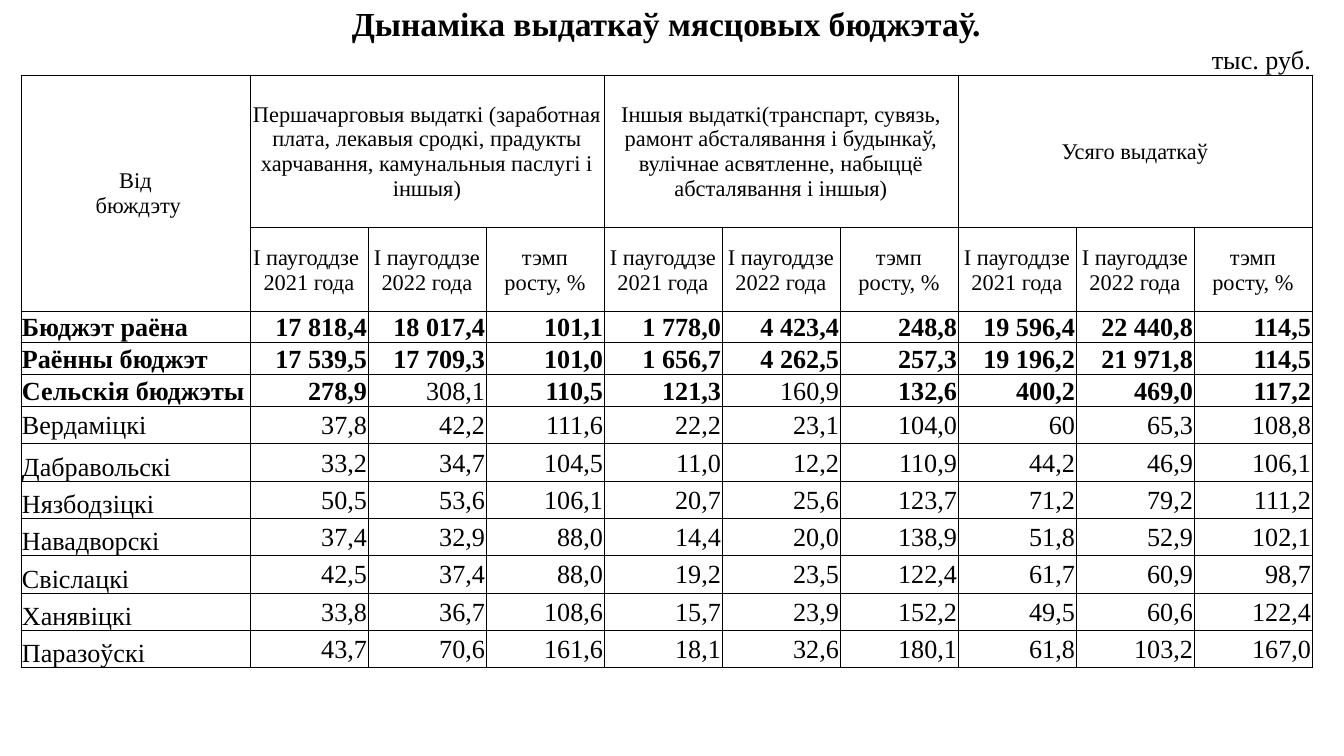
from typing import NamedTuple

from lxml import etree
from pptx import Presentation
from pptx import util as u
from pptx.dml.color import RGBColor
from pptx.enum import text
from pptx.oxml.ns import qn

PX = 914400 / 134.4
FONT = "Times New Roman"
BLACK = "000000"
NO_STYLE = "{2D5ABB26-0587-4C30-8999-92F81FD0307C}"
LEFT, CENTER, RIGHT = text.PP_ALIGN.LEFT, text.PP_ALIGN.CENTER, text.PP_ALIGN.RIGHT
MIDDLE, BOTTOM = text.MSO_ANCHOR.MIDDLE, text.MSO_ANCHOR.BOTTOM
ALL_SIDES = ("L", "R", "T", "B")
COL_WIDTHS = [229] + [118] * 9
ROW_HEIGHTS = [40, 31, 153, 84, 31, 32, 32, 37, 38, 37, 37, 38, 37, 37]


class Style(NamedTuple):
    size: int
    align: text.PP_ALIGN
    anchor: text.MSO_ANCHOR = MIDDLE
    bold: bool = False


class Budget(NamedTuple):
    name: str
    values: tuple[str, ...]
    bold: bool = False
    anchor: text.MSO_ANCHOR = BOTTOM
    regular_columns: tuple[int, ...] = ()


TITLE = Style(18, CENTER, BOTTOM, True)
UNIT = Style(14, RIGHT, BOTTOM)
HEADER = Style(12, CENTER)

GROUPS = [
    "Першачарговыя выдаткі (заработная плата, лекавыя сродкі, прадукты харчавання, камунальныя паслугі і іншыя)",
    "Іншыя выдаткі(транспарт, сувязь, рамонт абсталявання і будынкаў, вулічнае асвятленне, набыццё абсталявання і іншыя)",
    "Усяго выдаткаў",
]
GROWTH = ("тэмп", "росту, %")
PERIODS = [("I паугоддзе ", "2021 года"), ("I паугоддзе", "2022 года"), GROWTH]
PERIODS += [("I паугоддзе 2021 года",), ("I паугоддзе 2022 года",), GROWTH] * 2

BUDGETS = [
    Budget("Бюджэт раёна", ("17 818,4", "18 017,4", "101,1", "1 778,0", "4 423,4", "248,8",
                            "19 596,4", "22 440,8", "114,5"), True, MIDDLE),
    Budget("Раённы бюджэт", ("17 539,5", "17 709,3", "101,0", "1 656,7", "4 262,5", "257,3",
                             "19 196,2", "21 971,8", "114,5"), True, MIDDLE),
    Budget("Сельскія бюджэты", ("278,9", "308,1", "110,5", "121,3", "160,9", "132,6",
                                "400,2", "469,0", "117,2"), True, MIDDLE, (2, 5)),
    Budget("Вердаміцкі", ("37,8", "42,2", "111,6", "22,2", "23,1", "104,0",
                          "60", "65,3", "108,8"), anchor=MIDDLE),
    Budget("Дабравольскі", ("33,2", "34,7", "104,5", "11,0", "12,2", "110,9", "44,2", "46,9", "106,1")),
    Budget("Нязбодзіцкі", ("50,5", "53,6", "106,1", "20,7", "25,6", "123,7", "71,2", "79,2", "111,2")),
    Budget("Навадворскі", ("37,4", "32,9", "88,0", "14,4", "20,0", "138,9", "51,8", "52,9", "102,1")),
    Budget("Свіслацкі", ("42,5", "37,4", "88,0", "19,2", "23,5", "122,4", "61,7", "60,9", "98,7")),
    Budget("Ханявіцкі", ("33,8", "36,7", "108,6", "15,7", "23,9", "152,2", "49,5", "60,6", "122,4")),
    Budget("Паразоўскі", ("43,7", "70,6", "161,6", "18,1", "32,6", "180,1", "61,8", "103,2", "167,0")),
]


def px(n: int) -> u.Emu:
    return u.Emu(round(n * PX))


def rgb(value: str) -> RGBColor:
    return RGBColor.from_string(value)


def format_cell(cell, sides: tuple[str, ...]) -> None:
    cell.margin_left = cell.margin_right = cell.margin_top = px(1)
    cell.margin_bottom = 0
    cell.fill.background()
    tc_pr = cell._tc.get_or_add_tcPr()
    for i, side in enumerate(sides):
        ln = etree.Element(qn(f"a:ln{side}"), w=str(u.Pt(0.5)))
        fill = etree.SubElement(ln, qn("a:solidFill"))
        etree.SubElement(fill, qn("a:srgbClr"), val=BLACK)
        tc_pr.insert(i, ln)
    end = etree.SubElement(cell.text_frame.paragraphs[0]._p, qn("a:endParaRPr"))
    end.set("sz", "1200")


def write(cell, lines: tuple[str, ...], style: Style) -> None:
    cell.vertical_anchor = style.anchor
    tf = cell.text_frame
    for i, line in enumerate(lines):
        p = tf.add_paragraph() if i else tf.paragraphs[0]
        p.alignment = style.align
        r = p.add_run()
        r.text = line
        r.font.name = FONT
        r.font.size = u.Pt(style.size)
        r.font.bold = style.bold
        r.font.color.rgb = rgb(BLACK)


def add_grid(slide):
    frame = slide.shapes.add_table(len(ROW_HEIGHTS), len(COL_WIDTHS), px(21), px(4),
                                   px(sum(COL_WIDTHS)), px(sum(ROW_HEIGHTS)))
    table = frame.table
    table.first_row = table.horz_banding = False
    table._tbl.tblPr.find(qn("a:tableStyleId")).text = NO_STYLE
    for column, width in zip(table.columns, COL_WIDTHS):
        column.width = px(width)
    for row, height in zip(table.rows, ROW_HEIGHTS):
        row.height = px(height)
    for i, row in enumerate(table.rows):
        sides = ((), ("B",))[i] if i < 2 else ALL_SIDES
        for cell in row.cells:
            format_cell(cell, sides)
    return table


def fill_headers(table) -> None:
    table.cell(0, 0).merge(table.cell(0, 9))
    write(table.cell(0, 0), ("Дынаміка выдаткаў мясцовых бюджэтаў.",), TITLE)
    for col in (1, 3, 5):
        table.cell(1, col).merge(table.cell(1, col + 1))
    write(table.cell(1, 9), ("тыс. руб.",), UNIT)
    table.cell(2, 0).merge(table.cell(3, 0))
    write(table.cell(2, 0), ("Від", " бюждэту"), HEADER)
    for i, group in enumerate(GROUPS):
        col = 1 + 3 * i
        table.cell(2, col).merge(table.cell(2, col + 2))
        write(table.cell(2, col), (group,), HEADER)
    for col, lines in enumerate(PERIODS, 1):
        write(table.cell(3, col), lines, HEADER)


def fill_budget(table, row: int, budget: Budget) -> None:
    write(table.cell(row, 0), (budget.name,), Style(14, LEFT, budget.anchor, budget.bold))
    for col, value in enumerate(budget.values, 1):
        bold = budget.bold and col not in budget.regular_columns
        write(table.cell(row, col), (value,), Style(14, RIGHT, bold=bold))


def main() -> None:
    prs = Presentation()
    prs.slide_width, prs.slide_height = px(1344), px(756)
    s = prs.slides.add_slide(prs.slide_layouts[6])
    table = add_grid(s)
    fill_headers(table)
    for row, budget in enumerate(BUDGETS, 4):
        fill_budget(table, row, budget)
    prs.save("out.pptx")


if __name__ == "__main__":
    main()
